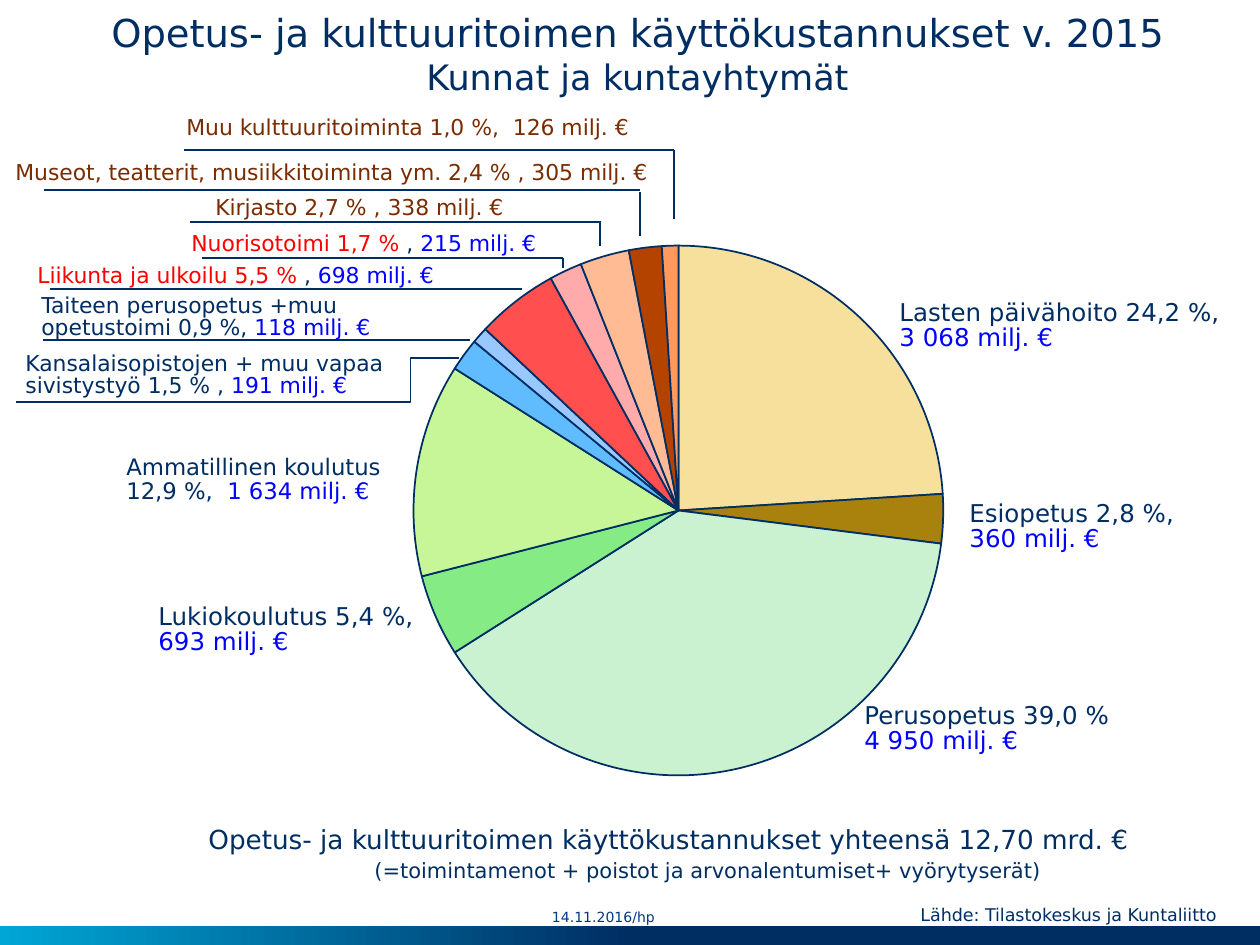
from lxml import etree
from pptx import Presentation
from pptx.chart.data import CategoryChartData
from pptx.dml.color import RGBColor
from pptx.enum.chart import XL_CHART_TYPE
from pptx.enum.shapes import MSO_CONNECTOR, MSO_SHAPE
from pptx.enum.text import MSO_ANCHOR, MSO_AUTO_SIZE, PP_ALIGN
from pptx.oxml.ns import qn
from pptx.util import Pt

PIE = XL_CHART_TYPE.PIE
STRAIGHT, ELBOW = MSO_CONNECTOR.STRAIGHT, MSO_CONNECTOR.ELBOW
RECTANGLE = MSO_SHAPE.RECTANGLE
TOP, MIDDLE = MSO_ANCHOR.TOP, MSO_ANCHOR.MIDDLE
GROW = MSO_AUTO_SIZE.SHAPE_TO_FIT_TEXT
LEFT, CENTER = PP_ALIGN.LEFT, PP_ALIGN.CENTER

NAVY, BLUE, RED, BROWN = "002E63", "0000FF", "FF0000", "792C00"
CYAN, DATE_BLUE = "00A6D6", "003882"

SLICES = [  # percent, colour
    (24, "F7E09C"), (3, "A8820D"), (39, "CAF2D1"), (5, "85EB85"),
    (13, "C7F698"), (2, "61BBFF"), (1, "98C8FF"), (5, "FF4F4F"),
    (2, "FFABAB"), (3, "FFBB94"), (2, "B54300"), (1, "FF995E"),
]

# box, size, paragraphs; each paragraph is a list of (text, colour)
LABELS = [
    ((887, 295, 362, 63), 14,
     [[("Lasten päivähoito 24,2 %,", NAVY)], [("3 068 milj. €", BLUE)]]),
    ((957, 496, 247, 63), 14,
     [[("Esiopetus 2,8 %,", NAVY)], [("360 milj. €", BLUE)]]),
    ((852, 698, 277, 63), 14,
     [[("Perusopetus 39,0 %", NAVY)], [("4 950 milj. €", BLUE)]]),
    ((146, 599, 291, 63), 14,
     [[("Lukiokoulutus 5,4 %,", NAVY)], [("693 milj. €", BLUE)]]),
    ((114, 451, 284, 59), 13,
     [[("Ammatillinen koulutus", NAVY)],
      [("12,9 %,  ", NAVY), ("1 634 milj. €", BLUE)]]),
    ((13, 347, 387, 58), 12.5,
     [[("Kansalaisopistojen + muu vapaa", NAVY)],
      [("sivistystyö 1,5 % , ", NAVY), ("191 milj. €", BLUE)]]),
    ((29, 289, 364, 58), 12.5,
     [[("Taiteen perusopetus +muu", NAVY)],
      [("opetustoimi 0,9 %, ", NAVY), ("118 milj. €", BLUE)]]),
    ((25, 260, 441, 35), 12.5,
     [[("Liikunta ja ulkoilu 5,5 % ", RED), (", ", NAVY), ("698 milj. €", BLUE)]]),
    ((179, 227, 399, 35), 12.5,
     [[("Nuorisotoimi 1,7 % ", RED), (", ", NAVY), ("215 milj. €", BLUE)]]),
    ((203, 192, 330, 35), 12.5, [[("Kirjasto 2,7 % , 338 milj. €", BROWN)]]),
    ((3, 156, 685, 35), 12.5,
     [[("Museot, teatterit, musiikkitoiminta ym. 2,4 % , 305 milj. €", BROWN)]]),
    ((174, 111, 484, 35), 12.5,
     [[("Muu kulttuuritoiminta 1,0 %,  126 milj. €", BROWN)]]),
]

LEADERS = [  # start, end, width in points
    ((184, 150), (674, 150), 0.75), ((674, 150), (674, 219), 0.75),
    ((44, 190), (640, 190), 0.75), ((640, 192), (640, 236), 0.75),
    ((190, 222), (600, 222), 1), ((600, 221), (600, 246), 0.75),
    ((202, 258), (563, 258), 0.75), ((563, 258), (563, 268), 0.75),
    ((50, 289), (522, 289), 1), ((43, 340), (470, 340), 0.75),
]


def px(*lengths):
    """Turn pixels (126 to the inch) into EMU."""
    return [round(length * 914400 / 126) for length in lengths]


def rgb(color):
    return RGBColor.from_string(color)


class SlideBuilder:
    font = "DejaVu Sans"
    line_color = NAVY

    def __init__(self, slide):
        self.slide = slide

    def text(self, box, paragraphs, *, sizes, align=LEFT, anchor=TOP, spacing=1.0,
             inset=True, wrap=False, indents=()):
        """Sizes hold one value per paragraph; indents likewise, in px."""
        frame = self.slide.shapes.add_textbox(*px(*box)).text_frame
        frame.word_wrap = wrap
        frame.auto_size = GROW
        frame.vertical_anchor = anchor
        if not inset:
            frame.margin_left = frame.margin_right = 0
            frame.margin_top = frame.margin_bottom = 0
        for index, (runs, size) in enumerate(zip(paragraphs, sizes)):
            paragraph = frame.add_paragraph() if index else frame.paragraphs[0]
            paragraph.alignment = align
            paragraph.line_spacing = spacing
            if indents:
                properties = paragraph._p.get_or_add_pPr()
                properties.set("marL", str(px(indents[index])[0]))
            for content, color in runs:
                run = paragraph.add_run()
                run.text = content
                run.font.name = self.font
                run.font.size = Pt(size)
                run.font.color.rgb = rgb(color)

    def line(self, start, end, width=0.75, bend=None):
        """Draw a straight line, or an elbow turning at the fraction bend."""
        kind = STRAIGHT if bend is None else ELBOW
        connector = self.slide.shapes.add_connector(kind, *px(*start, *end))
        connector.line.color.rgb = rgb(self.line_color)
        connector.line.width = Pt(width)
        properties = connector._element.spPr
        etree.SubElement(properties, qn("a:effectLst"))
        if bend is not None:
            adjustments = properties.find(qn("a:prstGeom")).get_or_add_avLst()
            etree.SubElement(adjustments, qn("a:gd"), name="adj1",
                             fmla=f"val {round(bend * 100000)}")

    def gradient_bar(self, box, right_color, left_color):
        bar = self.slide.shapes.add_shape(RECTANGLE, *px(*box))
        bar.shadow.inherit = False
        bar.line.fill.background()
        bar.fill.gradient()
        bar.fill.gradient_angle = 180
        stops = zip(bar.fill.gradient_stops, (0.5, 1), (right_color, left_color))
        for stop, position, color in stops:
            stop.position = position
            stop.color.rgb = rgb(color)

    def pie(self, box, slices, layout):
        data = CategoryChartData()
        data.categories = [str(number + 1) for number in range(len(slices))]
        data.add_series("Series 1", [value for value, _ in slices])
        chart = self.slide.shapes.add_chart(PIE, *px(*box), data).chart
        chart.has_legend = False
        chart.has_title = False
        chart.font.name = "Times New Roman"
        chart.font.size = Pt(17.8)
        chart.font.bold = True
        chart.font.color.rgb = rgb(NAVY)
        plot = chart.plots[0]
        plot.vary_by_categories = True
        for index, (_, color) in enumerate(slices):
            point = plot.series[0].points[index].format
            point.fill.solid()
            point.fill.fore_color.rgb = rgb(color)
            point.line.color.rgb = rgb(self.line_color)
            point.line.width = Pt(1)
        self.place_plot(chart, layout)

    @staticmethod
    def place_plot(chart, layout):
        area = chart._chartSpace.chart.plotArea
        for old in area.findall(qn("c:layout")):
            area.remove(old)
        holder = etree.Element(qn("c:layout"))
        area.insert(0, holder)
        manual = etree.SubElement(holder, qn("c:manualLayout"))
        settings = [("layoutTarget", "inner"), ("xMode", "edge"), ("yMode", "edge")]
        for name, value in settings + list(zip("xywh", layout)):
            etree.SubElement(manual, qn(f"c:{name}"), val=str(value))


def main():
    presentation = Presentation()
    presentation.slide_width, presentation.slide_height = px(1260, 945)
    slide = presentation.slides.add_slide(presentation.slide_layouts[6])
    builder = SlideBuilder(slide)

    builder.gradient_bar((0, 926, 1260, 19), NAVY, CYAN)
    builder.text((482, 894, 243, 45), [[("14.11.2016/hp", DATE_BLUE)]], sizes=[8],
                 align=CENTER, anchor=MIDDLE, inset=False, wrap=True)
    builder.text((86, 9, 1103, 89),
                 [[("Opetus- ja kulttuuritoimen käyttökustannukset v. 2015", NAVY)],
                  [("Kunnat ja kuntayhtymät", NAVY)]],
                 sizes=[22, 20], align=CENTER, inset=False)
    builder.pie((279, 214, 841, 631), SLICES, (0.16, 0.05, 0.63, 0.84))
    for box, size, paragraphs in LABELS:
        builder.text(box, paragraphs, sizes=[size] * len(paragraphs), spacing=0.85)
    for start, end, width in LEADERS:
        builder.line(start, end, width)
    builder.line((459, 358), (16, 402), bend=0.11)
    builder.text((196, 814, 1000, 76),
                 [[("Opetus- ja kulttuuritoimen käyttökustannukset yhteensä 12,70 mrd. €",
                    NAVY)],
                  [("(=toimintamenot + poistot ja arvonalentumiset+ vyörytyserät)", NAVY)]],
                 sizes=[15, 12], spacing=1.1, indents=[0, 166])
    builder.text((908, 898, 362, 34), [[("Lähde: Tilastokeskus ja Kuntaliitto", NAVY)]],
                 sizes=[10], wrap=True)
    presentation.save("out.pptx")


if __name__ == "__main__":
    main()
